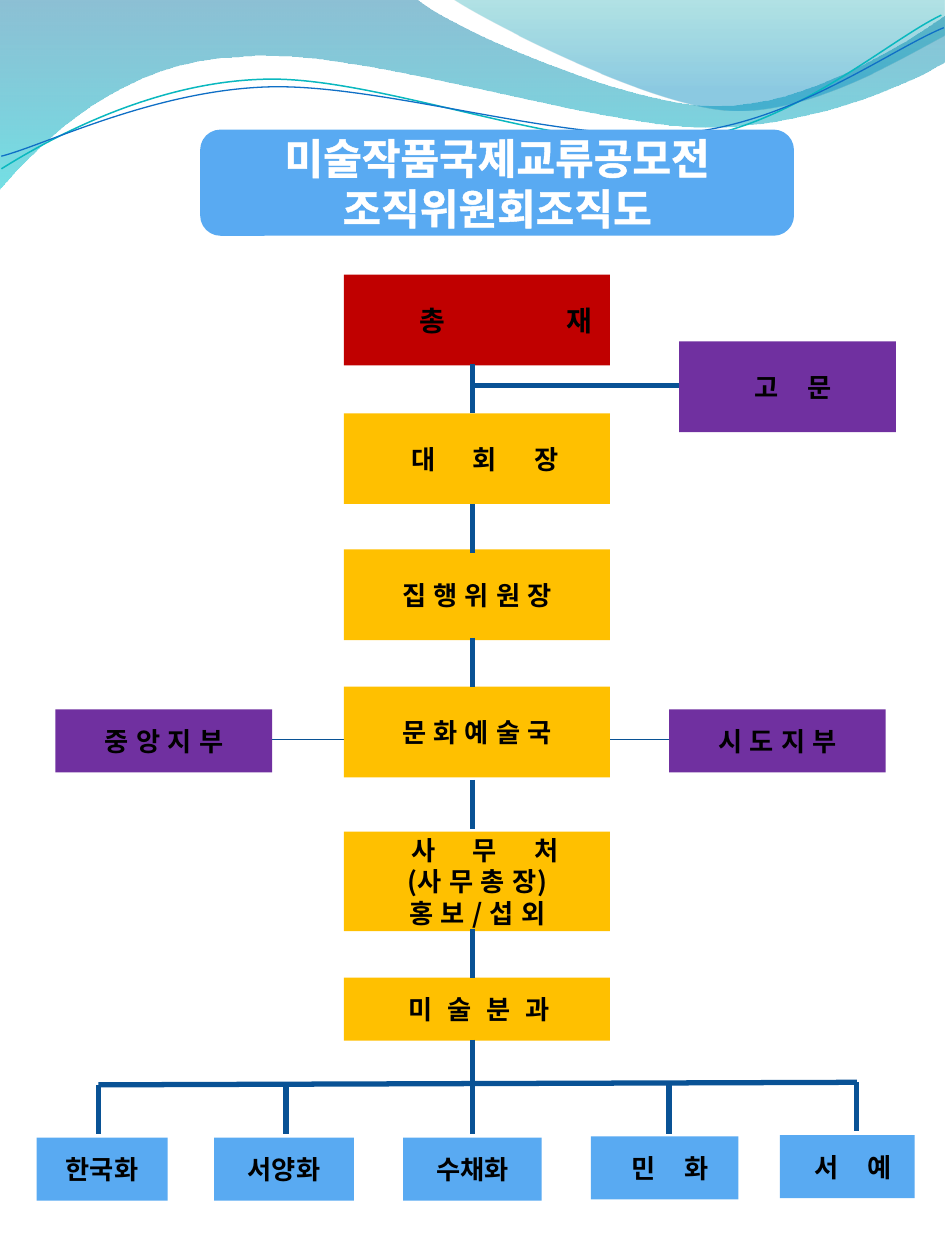
from math import cos, radians, sin

from lxml import etree
from pptx import Presentation
from pptx.dml.color import RGBColor
from pptx.enum.shapes import MSO_CONNECTOR as CONN, MSO_SHAPE as SHAPE
from pptx.enum.text import MSO_ANCHOR as ANCHOR, PP_ALIGN as ALIGN
from pptx.oxml.ns import qn
from pptx.util import Inches, Pt

THEME = dict(
    font="Noto Sans CJK KR", title=24, lead=16, body=15,
    white="FFFFFF", black="000000", red="C00000", gold="FFC000",
    purple="7030A0", sky="59AAF2", navy="095295", teal="0AB8BF", blue="0F6FC6",
    thick=3, thin=0.75, border=4.5, glyph_edge=1.45,
)
COLS, ROWS = 75, 100
WIDTH, HEIGHT = Inches(7.5), Inches(10)

SPINE_X, SPINE_LEFT, SPINE_W = 37.5, 27.3, 21.1
LINK = 3.9  # rows spanned by each short vertical link
TILT = -2.7  # degrees


def x(col):
    return round(WIDTH * col / COLS)


def y(row):
    return round(HEIGHT * row / ROWS)


def rgb(name):
    return RGBColor.from_string(THEME.get(name, name))


def edge_glyphs(rpr, color):
    ln = etree.Element(qn("a:ln"), w=str(Pt(THEME["glyph_edge"])))
    fill = etree.SubElement(ln, qn("a:solidFill"))
    etree.SubElement(fill, qn("a:srgbClr"), val=THEME[color])
    rpr.insert(0, ln)


def write(s, lines, size, color):
    """Fill a shape with (text, extra letter spacing in points) lines."""
    tf = s.text_frame
    tf.word_wrap, tf.vertical_anchor = True, ANCHOR.MIDDLE
    for i, (text, tracking) in enumerate(lines):
        p = tf.paragraphs[0] if i == 0 else tf.add_paragraph()
        p.alignment = ALIGN.CENTER
        r = p.add_run()
        r.text = text
        style = dict(name=THEME["font"], size=Pt(THEME[size]), bold=True)
        for key, value in style.items():
            setattr(r.font, key, value)
        r.font.color.rgb = rgb(color)
        rpr = r.font._element
        etree.SubElement(rpr, qn("a:ea"), typeface=THEME["font"])
        if tracking:
            rpr.set("spc", str(round(tracking * 100)))
            # The indent balances the spacing after the last letter.
            p._p.get_or_add_pPr().set("marL", str(Pt(tracking)))
        if size == "title":
            edge_glyphs(rpr, color)


def box(shapes, lines, fill, left, top, w, h, size="body", color="black",
        kind=SHAPE.RECTANGLE, border=None):
    s = shapes.add_shape(kind, x(left), y(top), x(w), y(h))
    s.shadow.inherit = False
    s.fill.solid()
    s.fill.fore_color.rgb = rgb(fill)
    if border:
        s.line.color.rgb, s.line.width = rgb(fill), Pt(border)
    else:
        s.line.fill.background()
    write(s, lines, size, color)


def link(shapes, x1, y1, x2, y2, weight="thick"):
    c = shapes.add_connector(CONN.STRAIGHT, x(x1), y(y1), x(x2), y(y2))
    c.line.color.rgb, c.line.width = rgb("navy"), Pt(THEME[weight])
    etree.SubElement(c._element.spPr, qn("a:effectLst"))


def outline(shapes, start, steps, close):
    """Draw steps of one point (line) or three points (Bézier curve)."""
    fb = shapes.build_freeform(x(start[0]), y(start[1]))
    fb.add_line_segments([(x(s[-1][0]), y(s[-1][1])) for s in steps], close=close)
    s = fb.convert_to_shape()
    s.shadow.inherit = False
    segments = list(s._element.spPr.iter(qn("a:lnTo")))
    for segment, step in zip(segments, steps):
        if len(step) == 3:
            curve = etree.Element(qn("a:cubicBezTo"))
            for px, py in step:
                etree.SubElement(curve, qn("a:pt"), x=str(x(px) - s.left),
                                 y=str(y(py) - s.top))
            segment.getparent().replace(segment, curve)
    return s


def wave(shapes, start, steps, stops):
    s = outline(shapes, start, steps, True)
    s.line.fill.background()
    s.fill.gradient()
    s.fill.gradient_angle = 270
    for stop, (position, color, _) in zip(s.fill.gradient_stops, stops):
        stop.position, stop.color.rgb = position, RGBColor.from_string(color)
    colors = s._element.spPr.iter(qn("a:srgbClr"))
    for clr, (_, _, opacity) in zip(colors, stops):
        etree.SubElement(clr, qn("a:alpha"), val=str(opacity * 1000))


def ribbon(shapes, center, start, steps, color, weight):
    """Draw a tilted curve whose points are given as they appear."""
    cx, cy = center
    c, n = cos(radians(-TILT)), sin(radians(-TILT))

    def level(point):
        dx, dy = point[0] - cx, point[1] - cy
        return cx + dx * c - dy * n, cy + dx * n + dy * c

    flat = [[level(point) for point in step] for step in steps]
    s = outline(shapes, level(start), flat, False)
    s.rotation = TILT
    s.fill.background()
    s.line.color.rgb, s.line.width = rgb(color), Pt(weight)


def header_art(shapes):
    wave(shapes, (0, -0.1), [
        [(33, -0.1)],
        [(35.7, 2.2), (49.8, 8.4), (56.9, 8.4)],
        [(64, 8.4), (71.9, 3.4), (75, 1.2)],
        [(75.1, 4.8)],
        [(73.8, 5.8), (65.2, 10.1), (55.9, 10.1)],
        [(46.6, 10), (28.6, 3.7), (19.3, 4.5)],
        [(9.7, 4.7), (3.4, 11.1), (-0.1, 15.1)],
    ], [(0, "0074A1", 45), (1, "00C6CF", 55)])
    wave(shapes, (35.9, -0.1), [
        [(38.2, 1.5), (51.1, 8.2), (57.7, 8.7)],
        [(64.2, 9.2), (72.1, 4.3), (75, 2.8)],
        [(75, 0)],
    ], [(0, "00A1A9", 30), (0.8, "008BBF", 45)])
    ribbon(shapes, (37.4, 7.75), (0.1, 13.4), [
        [(3.6, 11.2), (11.8, 6.6), (20.7, 6.3)],
        [(29.6, 5.9), (44.5, 12.1), (53.5, 11.2)],
        [(62.6, 10.4), (70.3, 3.3), (74.7, 1.2)],
    ], "teal", 0.85)
    ribbon(shapes, (37.55, 7.85), (0.1, 12.4), [
        [(3.6, 11.5), (12.2, 7.2), (21.2, 6.9)],
        [(30.2, 6.6), (44.9, 11.4), (53.8, 10.6)],
        [(62.8, 9.9), (70.5, 4), (74.9, 2.2)],
    ], "blue", 0.75)


def spine(shapes):
    """Central chain of offices with the advisers and branches beside it."""
    for left in (20.3, 46.9):
        link(shapes, left, 58.7, left + 7, 58.7, "thin")
    box(shapes, [("총 재", 33)], "red", SPINE_LEFT, 21.8, SPINE_W, 7.2, "lead")
    for top, h, lines in [
        (32.8, 7.2, [("대 회 장", 9)]),
        (43.6, 7.2, [("집 행 위 원 장", 0.4)]),
        (54.5, 7.2, [("문 화 예 술 국", 0.4)]),
        (66, 7.9, [("사 무 처", 9), ("(사 무 총 장)", 0.4), ("홍 보 / 섭 외", 0.4)]),
        (77.6, 5, [("미 술 분 과", 2.5)]),
    ]:
        box(shapes, lines, "gold", SPINE_LEFT, top, SPINE_W, h)
    for text, tracking, left, top, h in [
        ("고 문", 6.5, 53.9, 27.1, 7.2),
        ("중 앙 지 부", 0.4, 4.4, 56.3, 5),
        ("시 도 지 부", 0.4, 53.1, 56.3, 5),
    ]:
        box(shapes, [(text, tracking)], "purple", left, top, 17.2, h)
    link(shapes, SPINE_X, 30.6, 53.9, 30.6)
    for top in (28.9, 40, 50.6, 61.9, 73.7, 82.5):
        link(shapes, SPINE_X, top, SPINE_X, top + LINK)


def divisions(shapes):
    """Bottom row of art divisions hanging from one bar."""
    link(shapes, 7.8, 86.1, 68, 85.9)
    for text, tracking, left, top, w, drop_x, drop_y in [
        ("한국화", 0, 2.9, 90.3, 10.4, 7.8, 86.1),
        ("서양화", 0, 17, 90.3, 11.1, 22.7, 86.1),
        ("수채화", 0, 32, 90.3, 11, SPINE_X, 86.1),
        ("민 화", 6.5, 46.9, 90.2, 11.7, 53.1, 86.1),
        ("서 예", 6.5, 61.9, 90.1, 10.7, 68, 85.9),
    ]:
        box(shapes, [(text, tracking)], "sky", left, top, w, 5)
        link(shapes, drop_x, drop_y, drop_x, drop_y + LINK)


def main():
    prs = Presentation()
    prs.slide_width, prs.slide_height = WIDTH, HEIGHT
    shapes = prs.slides.add_slide(prs.slide_layouts[6]).shapes
    header_art(shapes)
    box(shapes, [("미술작품국제교류공모전", 0), ("조직위원회조직도", 0)], "sky",
        16.2, 10.6, 46.5, 7.8, "title", "white",
        SHAPE.ROUNDED_RECTANGLE, THEME["border"])
    spine(shapes)
    divisions(shapes)
    prs.save("out.pptx")


if __name__ == "__main__":
    main()
